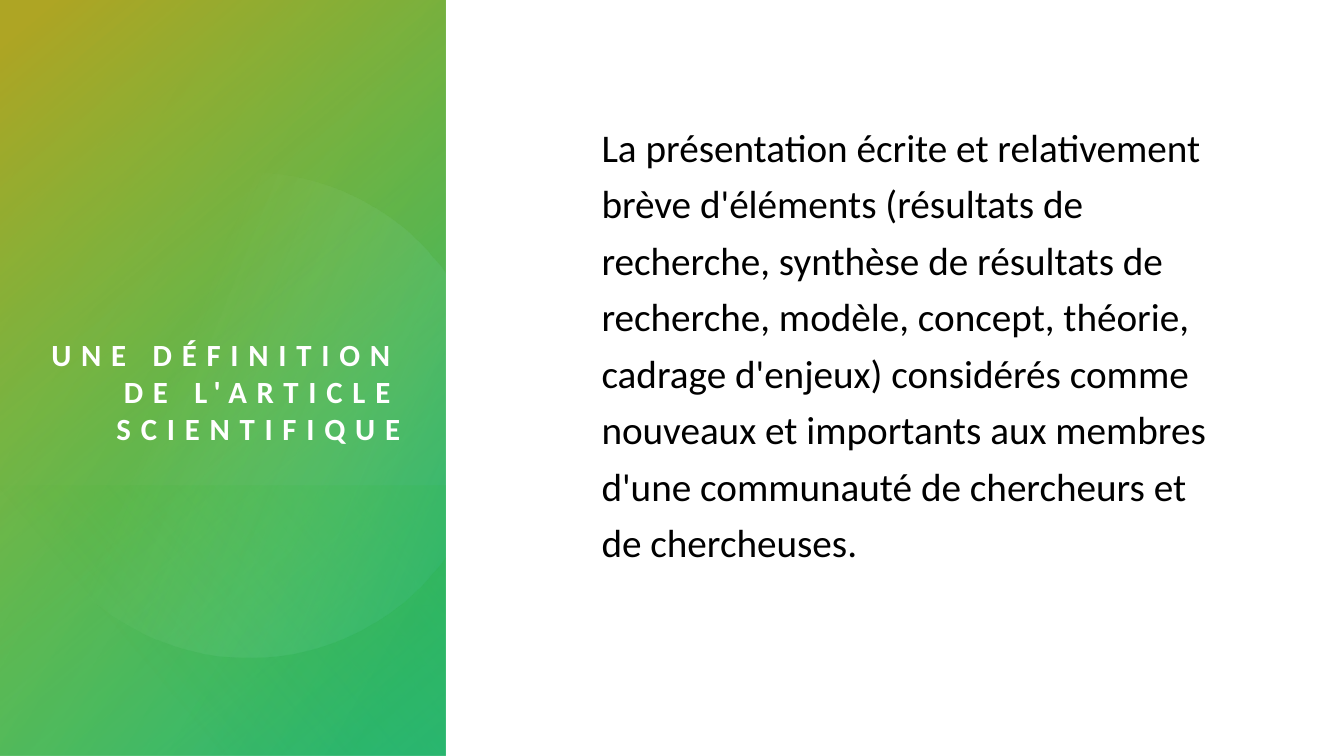
import math

from pptx import Presentation
from pptx.dml.color import RGBColor
from pptx.enum.shapes import MSO_SHAPE
from pptx.enum.text import MSO_ANCHOR, MSO_AUTO_SIZE, PP_ALIGN
from pptx.oxml import parse_xml
from pptx.oxml.ns import qn
from pptx.util import Cm, Pt

RECT = MSO_SHAPE.RECTANGLE
TOP, BOTTOM = MSO_ANCHOR.TOP, MSO_ANCHOR.BOTTOM
LEFT, RIGHT = PP_ALIGN.LEFT, PP_ALIGN.RIGHT
NO_FIT = MSO_AUTO_SIZE.NONE
NS = "http://schemas.openxmlformats.org/drawingml/2006/main"
SLIDE_W, SLIDE_H = 33.87, 19.05
PANEL_W = 11.23
TITLE = "UNE DÉFINITION DE L'ARTICLE SCIENTIFIQUE"
DEFINITION = (
    "La présentation écrite et relativement brève d'éléments (résultats de "
    "recherche, synthèse de résultats de recherche, modèle, concept, théorie, "
    "cadrage d'enjeux) considérés comme nouveaux et importants aux membres "
    "d'une communauté de chercheurs et de chercheuses."
)


def rgb(value):
    """Turn a hex string into a colour."""
    return RGBColor.from_string(value)


class Deck:
    """Hold the text style and the current slide."""

    font = "Calibri"

    def __init__(self, prs):
        """Add a title-only slide."""
        self.s = prs.slides.add_slide(prs.slide_layouts[5])

    def gradient(self, sp, stops, angle):
        """Fill a shape with (position, colour, opacity) stops, all in percent."""
        sp.shadow.inherit = False
        sp.line.fill.background()
        sp.fill.background()
        marks = "".join(
            f'<a:gs pos="{pos * 1000}"><a:srgbClr val="{rgb(color)}">'
            f'<a:alpha val="{alpha * 1000}"/></a:srgbClr></a:gs>'
            for pos, color, alpha in stops
        )
        grad = parse_xml(
            f'<a:gradFill xmlns:a="{NS}" rotWithShape="1"><a:gsLst>{marks}</a:gsLst>'
            f'<a:lin ang="{angle * 60000}" scaled="0"/></a:gradFill>'
        )
        spPr = sp.element.spPr
        spPr.replace(spPr.find(qn("a:noFill")), grad)

    def turned_rect(self, top, stops, angle):
        """Add a mirrored quarter-turn layer from top to the foot of the panel."""
        height = SLIDE_H - top
        x = (PANEL_W - height) / 2
        y = top + (height - PANEL_W) / 2
        sp = self.s.shapes.add_shape(RECT, Cm(x), Cm(y), Cm(height), Cm(PANEL_W))
        sp.rotation = 90
        sp.element.spPr.find(qn("a:xfrm")).set("flipH", "1")
        self.gradient(sp, stops, angle)

    def cut_circle(self, cx, cy, radius, stops, angle):
        """Add a circle cut off at the right edge of the panel."""
        start = math.acos((PANEL_W - cx) / radius)
        steps = 120
        angles = [start + (2 * math.pi - 2 * start) * i / steps for i in range(steps + 1)]
        points = [
            (100 * (cx + radius * math.cos(a)), 100 * (cy + radius * math.sin(a)))
            for a in angles
        ]
        outline = self.s.shapes.build_freeform(*points[0], scale=Cm(1) / 100)
        outline.add_line_segments(points[1:], close=True)
        self.gradient(outline.convert_to_shape(), stops, angle)

    def text(self, sp, box, words, size, color, anchor, align):
        """Place a text shape, write one paragraph and return it."""
        sp.left, sp.top, sp.width, sp.height = (Cm(v) for v in box)
        tf = sp.text_frame
        tf.word_wrap = True
        tf.auto_size = NO_FIT
        tf.vertical_anchor = anchor
        tf.margin_left = tf.margin_top = tf.margin_right = tf.margin_bottom = 0
        tf.text = words
        p = tf.paragraphs[0]
        p.alignment = align
        p.font.name = self.font
        p.font.size = Pt(size)
        p.font.color.rgb = rgb(color)
        return p

    def title(self, box, words):
        """Format the title placeholder and bring it to the front."""
        sp = self.s.shapes.title
        p = self.text(sp, box, words, 22, "FFFFFF", BOTTOM, RIGHT)
        p.font.bold = True
        p.runs[0].font._element.set("spc", "700")
        sp.element.getparent().append(sp.element)

    def body(self, box, words):
        """Add the definition text."""
        sp = self.s.shapes.add_textbox(0, 0, 0, 0)
        p = self.text(sp, box, words, 28, "000000", TOP, LEFT)
        p.line_spacing = 1.2
        p.space_before = Pt(5)


def main():
    """Build and save the slide."""
    prs = Presentation()
    prs.slide_width, prs.slide_height = Cm(SLIDE_W), Cm(SLIDE_H)
    deck = Deck(prs)
    deck.turned_rect(0, [(8, "26B67D", 100), (100, "32B84B", 72)], 60)
    deck.turned_rect(0, [(0, "48B826", 0), (96, "AEA524", 100)], 40)
    deck.turned_rect(12.24, [(2, "32B84B", 35), (67, "48B826", 0)], 130)
    deck.cut_circle(6.27, 10.46, 6.1, [(39, "D8F5CF", 0), (100, "26B67D", 29)], 22)
    deck.title((1.07, 2.87, 9.02, 8.38), TITLE)
    deck.body((15.16, 2.87, 15.52, 13.46), DEFINITION)
    prs.save("out.pptx")


if __name__ == "__main__":
    main()
